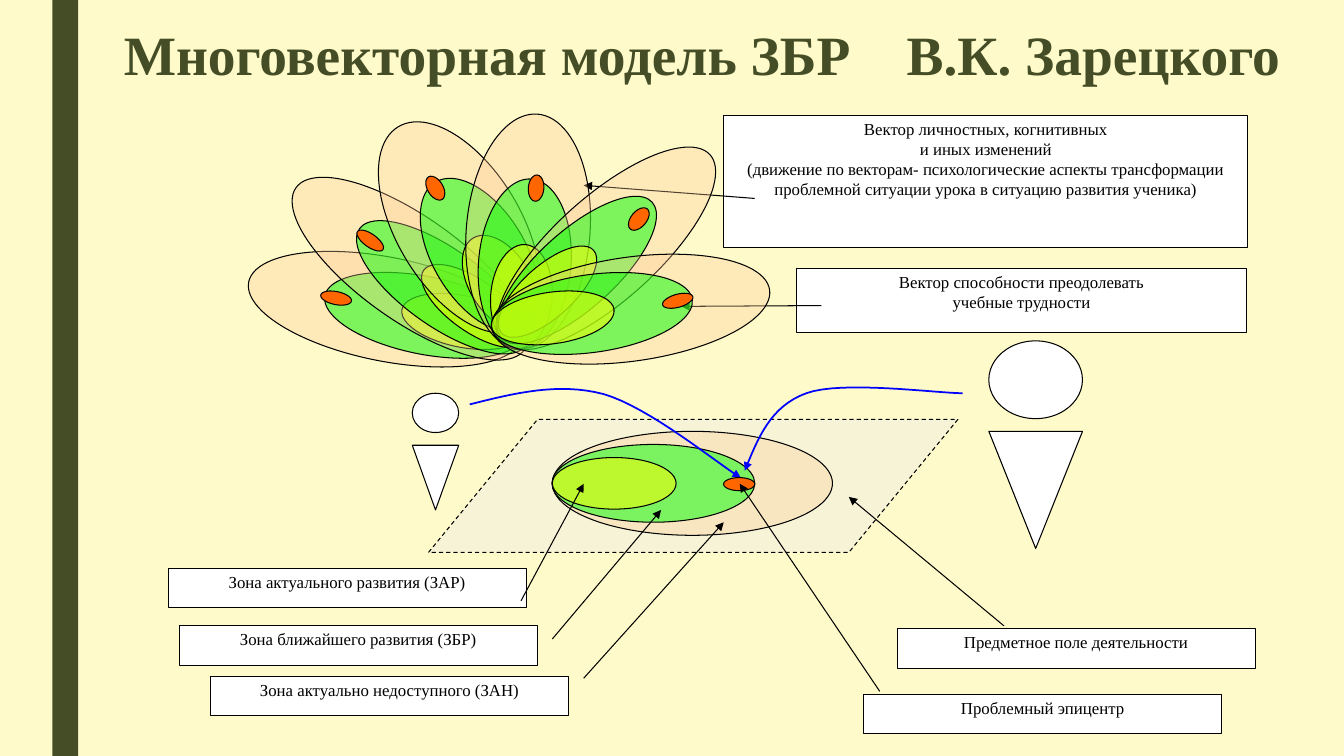
import pptx
import pptx.util
import pptx.dml.color
import pptx.enum.dml
import pptx.enum.shapes
import pptx.enum.text
import pptx.oxml.ns
import lxml.etree

Cm = pptx.util.Cm
Pt = pptx.util.Pt
MSO = pptx.enum.shapes.MSO_SHAPE
COLORS = {
    "paper": "FEFAC9", "olive": "444D26", "white": "FFFFFF", "black": "000000",
    "field": "EAEAEA", "peach": "FFCC99", "green": "00FF00", "yellow": "FFFF00",
    "orange": "FF6600", "blue": "0000FF",
}
ZONES = [(7.06, 2.62, "peach", 33), (5.11, 1.96, "green", 50), (3.12, 1.3, "yellow", 50)]
EVEN = (1, 1)
PLUMP = (0.84, 1.19)
PETALS = [
    (191.2, (9.73, 7.79), (11.66, 8.1), EVEN, 191.2, (8.47, 7.51), EVEN),
    (215.3, (10.34, 6.77), (11.95, 7.71), EVEN, 215.3, (9.33, 6.06), EVEN),
    (238.8, (11.57, 5.73), (12.6, 7.12), PLUMP, 238.8, (10.97, 4.74), PLUMP),
    (274.6, (13.31, 5.83), (13.14, 7.47), PLUMP, 274.6, (13.51, 4.74), PLUMP),
    (318, (15.27, 6.26), (13.8, 7.35), EVEN, 310.4, (16.1, 5.52), PLUMP),
    (352.1, (15.9, 7.79), (13.93, 8.01), EVEN, 344.6, (17.08, 7.58), EVEN),
]
PEOPLE = [(10.39, 9.91, 1.17, 0.99, 1.63), (24.92, 8.59, 2.36, 1.96, 2.95)]
CURVES = [
    [(11.84, 10.19), (12.95, 9.91), (14.07, 9.63), (15.21, 9.93),
     (16.36, 10.26), (18.08, 11.68), (18.67, 12.04)],
    [(24.26, 9.91), (23.6, 9.91), (21.23, 9.58), (20.32, 9.91),
     (19.41, 10.24), (19.1, 11.05), (18.77, 11.86)],
]
SMALL = (9.02, 0.99)
LABELS = [
    (22.61, 15.85, SMALL, ["Предметное поле деятельности"]),
    (4.24, 14.33, SMALL, ["Зона актуального развития (ЗАР)"]),
    (4.52, 15.77, SMALL, ["Зона ближайшего развития (ЗБР)"]),
    (5.31, 17.04, SMALL, ["Зона актуально недоступного (ЗАН)"]),
    (21.77, 17.5, SMALL, ["Проблемный эпицентр"]),
    (20.07, 6.76, (11.35, 1.63), ["Вектор способности преодолевать", "учебные трудности"]),
    (18.24, 2.9, (13.21, 3.33), [
        "Вектор личностных, когнитивных",
        "и иных изменений",
        "(движение по векторам- психологические аспекты трансформации "
        "проблемной ситуации урока в ситуацию развития ученика)",
    ]),
]
ARROWS = [
    ((25.3, 15.77), (21.39, 12.52)),
    ((13.13, 15.14), (14.71, 12.19)),
    ((14.71, 17.09), (18.24, 13.16)),
    ((13.92, 16.1), (16.66, 12.85)),
    ((20.7, 7.7), (17.17, 7.72)),
    ((19.02, 5), (14.71, 4.67)),
    ((22.17, 17.42), (18.64, 12.19)),
]


def rgb(name):
    return pptx.dml.color.RGBColor.from_string(COLORS[name])


def sub(parent, tag, **attrs):
    return lxml.etree.SubElement(parent, pptx.oxml.ns.qn(tag), attrs)


def add_run(p, text, size=12, color="black", bold=False, font="Times New Roman"):
    r = p.add_run()
    r.text = text
    r.font.size = Pt(size)
    r.font.name = font
    r.font.bold = bold
    r.font.color.rgb = rgb(color)
    return r


def bezier(a, b, c, d, t):
    u = 1 - t
    weights = (u ** 3, 3 * u * u * t, 3 * u * t * t, t ** 3)
    return tuple(Cm(sum(w * q[i] for w, q in zip(weights, (a, b, c, d)))) for i in (0, 1))


class Board:
    def __init__(self, s, line="black", width=0.75):
        self.s, self.line, self.width = s, line, width

    def title(self, words, gap):
        sp = self.s.shapes.title
        sp.left, sp.top, sp.width, sp.height = Cm(2.08), Cm(0.58), Cm(31.22), Cm(2.18)
        tf = sp.text_frame
        tf.word_wrap = True
        tf.auto_size = pptx.enum.text.MSO_AUTO_SIZE.NONE
        tf.vertical_anchor = pptx.enum.text.MSO_ANCHOR.TOP
        p = tf.paragraphs[0]
        p.alignment = pptx.enum.text.PP_ALIGN.CENTER
        p.line_spacing = 0.89
        for text in (words[0], " ", words[1]):
            r = add_run(p, text, size=39.6, color="olive", bold=True)
            if text == " ":
                r.font._element.set("spc", str(gap * 100))

    def shape(self, kind, x, y, w, h, fill="white", alpha=None, rot=0, outline=True):
        sp = self.s.shapes.add_shape(kind, Cm(x), Cm(y), Cm(w), Cm(h))
        sp.shadow.inherit = False
        sp.rotation = rot
        sp.fill.solid()
        sp.fill.fore_color.rgb = rgb(fill)
        if alpha:
            color = sp._element.spPr.find(".//" + pptx.oxml.ns.qn("a:srgbClr"))
            sub(color, "a:alpha", val=str(alpha * 1000))
        if outline:
            sp.line.color.rgb = rgb(self.line)
            sp.line.width = Pt(self.width)
        else:
            sp.line.fill.background()
        return sp

    def oval(self, center, w, h, **style):
        x, y = center
        return self.shape(MSO.OVAL, x - w / 2, y - h / 2, w, h, **style)

    def zones(self, angle, outer, inner, stretch):
        middle = [(a + b) / 2 for a, b in zip(outer, inner)]
        for center, (w, h, fill, alpha) in zip((outer, middle, inner), ZONES):
            self.oval(center, w * stretch[0], h * stretch[1], fill=fill, alpha=alpha, rot=angle)

    def spot(self, angle, center, stretch):
        self.oval(center, 0.79 * stretch[0], 0.33 * stretch[1], fill="orange", rot=angle)

    def person(self, x, y, w, head, body):
        self.shape(MSO.OVAL, x, y, w, head)
        self.shape(MSO.ISOSCELES_TRIANGLE, x, y + head + 0.32, w, body, rot=180)

    def label(self, x, y, size, lines):
        tf = self.shape(MSO.RECTANGLE, x, y, *size).text_frame
        tf.word_wrap = True
        tf.vertical_anchor = pptx.enum.text.MSO_ANCHOR.TOP
        tf.margin_left = tf.margin_right = Cm(0.13)
        tf.margin_top = tf.margin_bottom = Cm(0.08)
        for i, text in enumerate(lines):
            p = tf.add_paragraph() if i else tf.paragraphs[0]
            p.alignment = pptx.enum.text.PP_ALIGN.CENTER
            add_run(p, text)

    def arrowhead(self, sp, color, width):
        sp.line.color.rgb = rgb(color)
        sp.line.width = Pt(width)
        sub(sp.line._get_or_add_ln(), "a:tailEnd", type="triangle")

    def arrow(self, start, end):
        sp = self.s.shapes.add_connector(
            pptx.enum.shapes.MSO_CONNECTOR.STRAIGHT, *(Cm(v) for v in start + end))
        self.arrowhead(sp, self.line, self.width)
        sub(sp._element.spPr, "a:effectLst")

    def curve(self, points, steps=16):
        dots = [bezier(*points[k:k + 4], i / steps) for k in (0, 3) for i in range(1, steps + 1)]
        builder = self.s.shapes.build_freeform(*(Cm(v) for v in points[0]))
        builder.add_line_segments(dots, close=False)
        sp = builder.convert_to_shape()
        sp.shadow.inherit = False
        sp.fill.background()
        self.arrowhead(sp, "blue", 1.25)


def main():
    prs = pptx.Presentation()
    prs.slide_width, prs.slide_height = Cm(33.87), Cm(19.05)
    s = prs.slides.add_slide(prs.slide_layouts[5])
    s.background.fill.solid()
    s.background.fill.fore_color.rgb = rgb("paper")
    board = Board(s)
    board.shape(MSO.RECTANGLE, 1.32, 0, 0.65, 19.05, fill="olive", outline=False)
    board.title(("Многовекторная модель ЗБР", "В.К. Зарецкого"), gap=30)
    for person in PEOPLE:
        board.person(*person)
    field = board.shape(MSO.PARALLELOGRAM, 10.8, 10.57, 13.34, 3.35, fill="field", alpha=40)
    field.adjustments[0] = 0.82
    field.line.dash_style = pptx.enum.dml.MSO_LINE.DASH
    board.zones(0, (17.45, 12.18), (15.48, 12.18), EVEN)
    for points in CURVES:
        board.curve(points)
    for label in LABELS:
        board.label(*label)
    board.spot(0, (18.63, 12.2), EVEN)
    for start, end in ARROWS:
        board.arrow(start, end)
    for petal in PETALS:
        board.zones(*petal[:4])
        board.spot(*petal[4:])
    prs.save("out.pptx")


if __name__ == "__main__":
    main()
